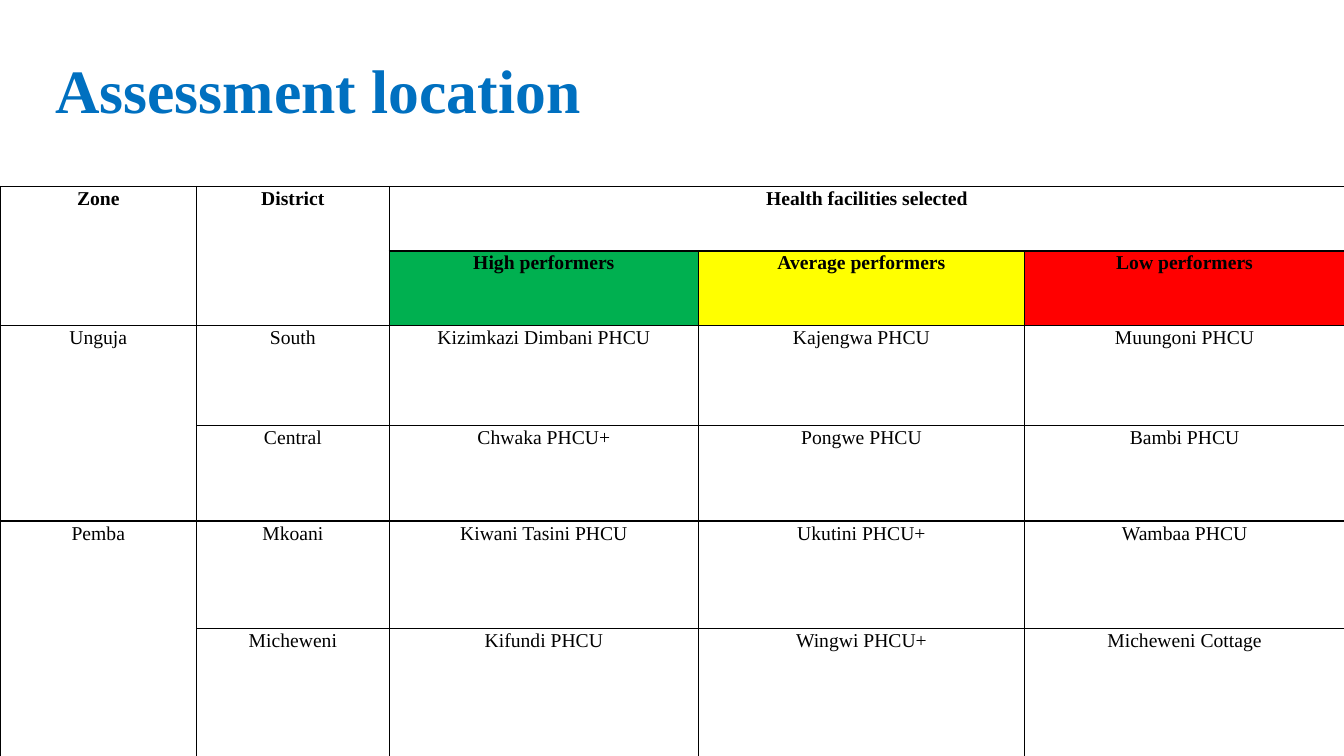
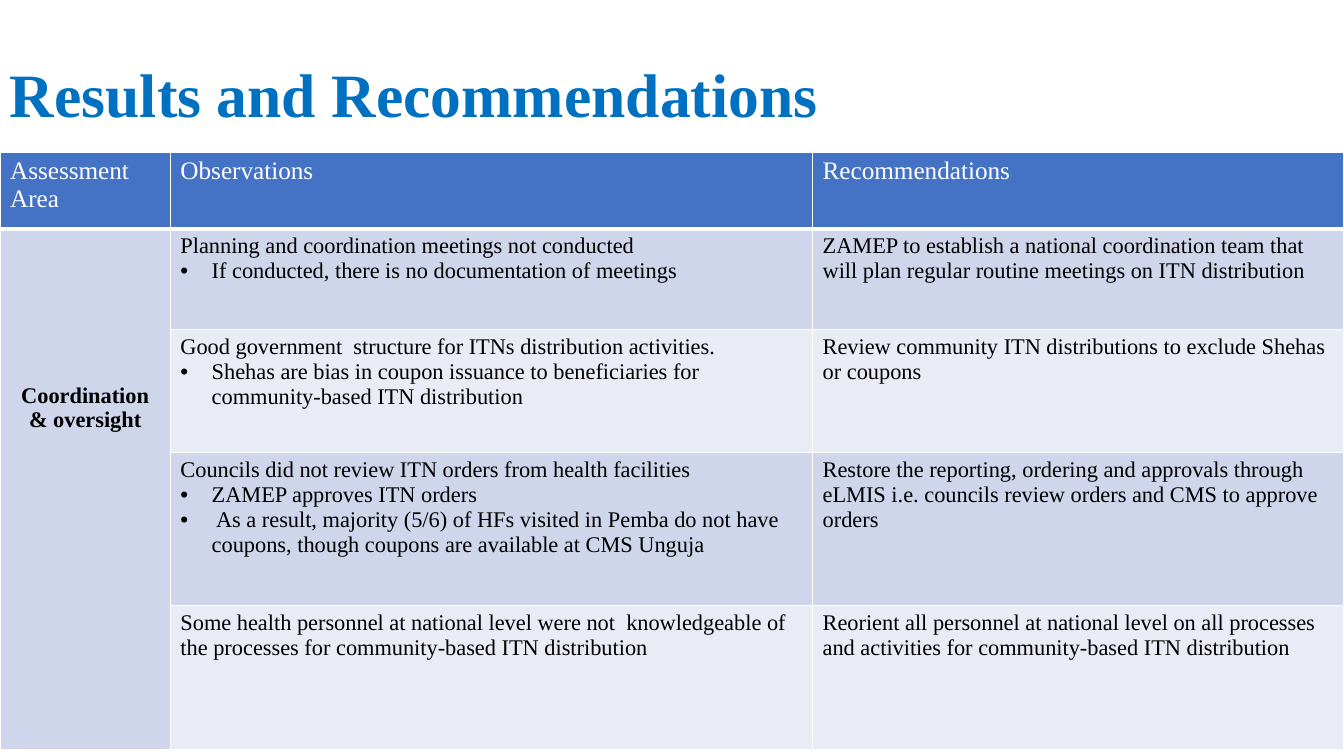
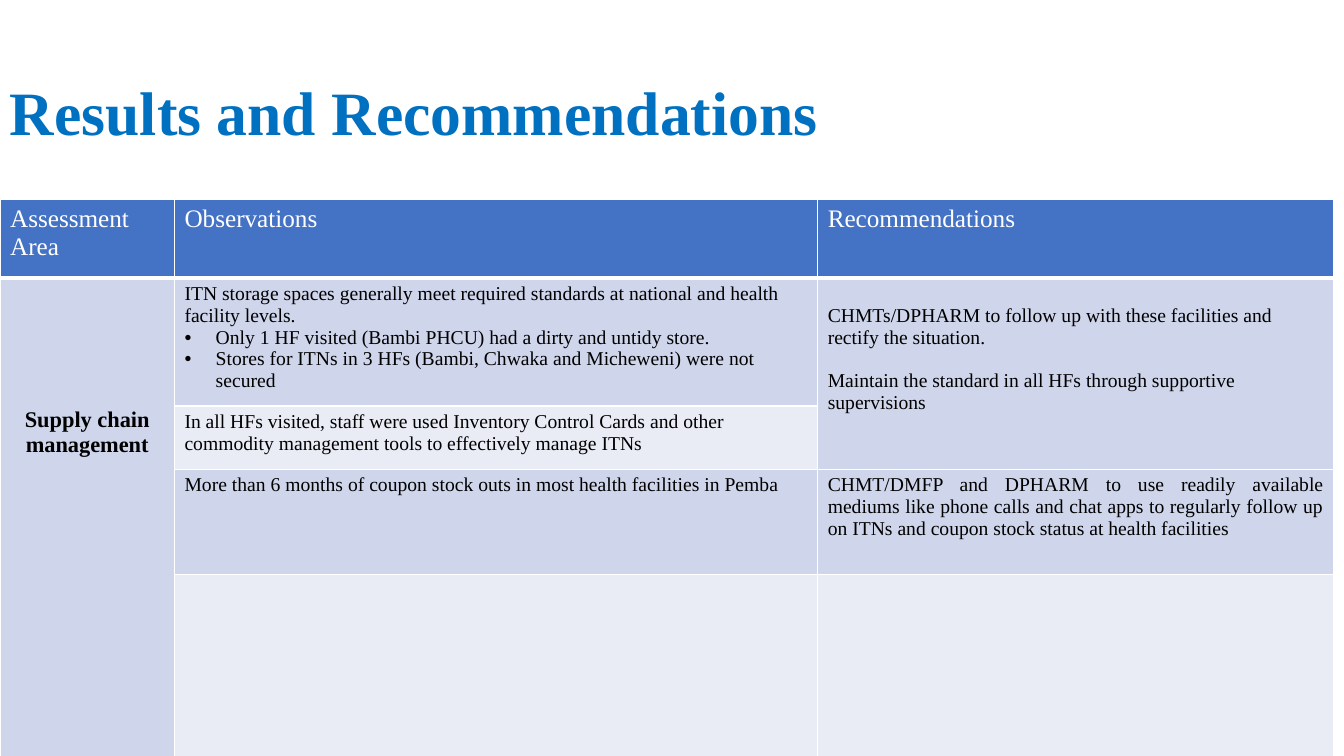
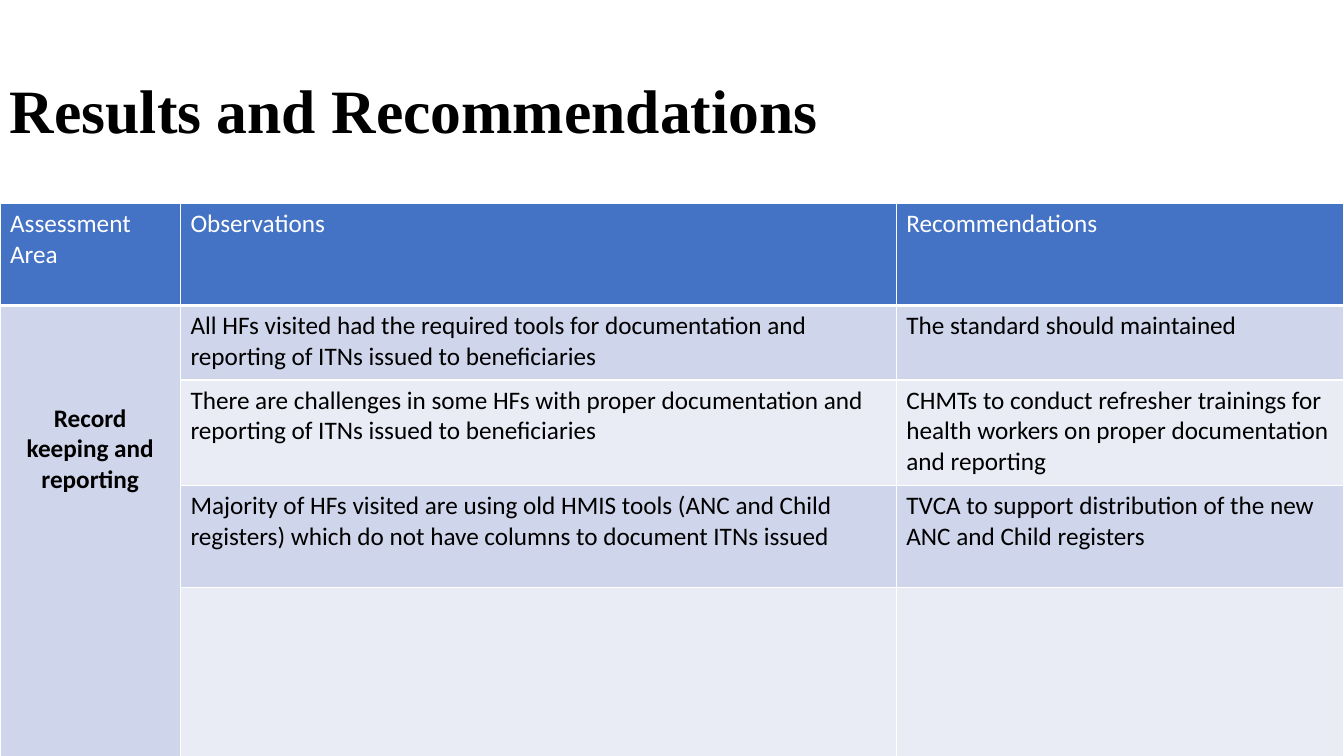
from dataclasses import dataclass, field

from lxml.etree import SubElement
from pptx import Presentation
from pptx.dml.color import RGBColor
from pptx.enum.text import MSO_ANCHOR, PP_ALIGN
from pptx.oxml.ns import qn
from pptx.util import Inches, Pt


@dataclass(frozen=True)
class Theme:
    width: float = 13.33
    height: float = 7.5
    serif: str = "Times New Roman"
    sans: str = "Calibri"
    black: str = "000000"
    white: str = "FFFFFF"
    title_blue: str = "0070C0"
    header_blue: str = "4472C4"
    bands: tuple = ("E9EBF5", "CFD5EA")
    high: str = "00B050"
    average: str = "FFFF00"
    low: str = "FF0000"
    title_size: int = 44
    header_size: int = 18
    area_size: int = 16
    body_size: int = 16
    small_size: int = 14
    cell_margins: tuple = (0.1, 0.05)
    bullet_indent: float = 0.31


THEME = Theme()


@dataclass
class Para:
    text: str
    bullet: bool = False
    format: dict = field(default_factory=dict)


@dataclass
class Entry:
    """Content of one table cell; top is the margin above its text."""
    paras: list
    top: float = THEME.cell_margins[1]


def bullet(text):
    return Para(text, bullet=True)


def apply_format(target, values):
    for attribute, value in values.items():
        setattr(target, attribute, value)


def font_style(size, name=THEME.serif, color=THEME.black, bold=False):
    return {"size": Pt(size), "name": name, "bold": bold, "color": color}


def write_paragraph(paragraph, para, style, shared_format):
    if para.bullet:
        properties = paragraph._p.get_or_add_pPr()
        indent = Inches(THEME.bullet_indent)
        properties.set("marL", str(indent))
        properties.set("indent", str(-indent))
        SubElement(properties, qn("a:buFont"), typeface="Arial")
        SubElement(properties, qn("a:buChar"), char="•")
    apply_format(paragraph, {**shared_format, **para.format})
    run = paragraph.add_run()
    run.text = para.text
    apply_format(run.font, {k: v for k, v in style.items() if k != "color"})
    run.font.color.rgb = RGBColor.from_string(style["color"])


def write_paragraphs(frame, paras, style, shared_format):
    for index, para in enumerate(paras):
        paragraph = frame.add_paragraph() if index else frame.paragraphs[0]
        write_paragraph(paragraph, para, style, shared_format)


def add_slide(deck):
    return deck.slides.add_slide(deck.slide_layouts[6])


def add_title(slide, text, left, top, width, height, color=THEME.title_blue):
    box = slide.shapes.add_textbox(*map(Inches, (left, top, width, height)))
    frame = box.text_frame
    apply_format(frame, {"word_wrap": True, "vertical_anchor": MSO_ANCHOR.MIDDLE})
    style = font_style(THEME.title_size, color=color, bold=True)
    write_paragraphs(frame, [Para(text)], style, {"line_spacing": 0.9})


def add_grid(slide, top, columns, rows, spans):
    """Add an unstyled table; each span is (first row, first column, last row, last column)."""
    size = Inches(sum(columns)), Inches(sum(rows))
    table = slide.shapes.add_table(
        len(rows), len(columns), 0, Inches(top), *size).table
    apply_format(table, {"first_row": False, "horz_banding": False})
    for column, width in zip(table.columns, columns):
        column.width = Inches(width)
    for row, height in zip(table.rows, rows):
        row.height = Inches(height)
    for first_row, first_column, last_row, last_column in spans:
        table.cell(first_row, first_column).merge(table.cell(last_row, last_column))
    return table


def set_borders(cell, color, bottom=1):
    properties = cell._tc.get_or_add_tcPr()
    for side, width in (("L", 1), ("R", 1), ("T", 1), ("B", bottom)):
        line = SubElement(properties, qn(f"a:ln{side}"), w=str(Pt(width)))
        SubElement(SubElement(line, qn("a:solidFill")), qn("a:srgbClr"), val=color)


def set_fill(cell, color):
    if color:
        cell.fill.solid()
        cell.fill.fore_color.rgb = RGBColor.from_string(color)
    else:
        cell.fill.background()


def set_margins(cell, side, top, bottom):
    apply_format(cell, {
        "margin_left": Inches(side), "margin_right": Inches(side),
        "margin_top": Inches(top), "margin_bottom": Inches(bottom)})


def add_location_table(slide, columns, rows, spans, content):
    table = add_grid(slide, 1.85, columns, rows, spans)
    fills = {(1, 2): THEME.high, (1, 3): THEME.average, (1, 4): THEME.low}
    shared = {"alignment": PP_ALIGN.CENTER, "line_spacing": 1.07}
    for r, texts in enumerate(content):
        style = font_style(THEME.small_size, bold=r < 2)
        for c, text in enumerate(texts):
            cell = table.cell(r, c)
            set_margins(cell, 0.07, 0, 0)
            set_borders(cell, THEME.black)
            set_fill(cell, fills.get((r, c)))
            if text:
                write_paragraphs(cell.text_frame, [Para(text)], style, shared)


def add_results_table(slide, top, columns, rows, area, findings,
                      body_size=THEME.body_size, area_size=THEME.area_size,
                      font=THEME.serif, spans=()):
    """Add a banded table: a header, one assessment area, and (observations, recommendations) rows."""
    table = add_grid(slide, top, columns, rows, [(1, 0, len(rows) - 1, 0), *spans])
    header = [Entry([Para(text)]) for text in
              ("Assessment Area", "Observations", "Recommendations")]
    areas = [area] + [None] * (len(findings) - 1)
    content = [header] + [(first, *pair) for first, pair in zip(areas, findings)]
    header_style = font_style(THEME.header_size, font, THEME.white)
    area_style = font_style(area_size, font, bold=True)
    body_style = font_style(body_size, font)
    side, edge = THEME.cell_margins
    for r, entries in enumerate(content):
        for c, entry in enumerate(entries):
            cell = table.cell(r, c)
            in_header, in_area = r == 0, r > 0 and c == 0
            set_borders(cell, THEME.white, bottom=3 if in_header else 1)
            set_fill(cell, THEME.header_blue if in_header else THEME.bands[r % 2])
            set_margins(cell, side, entry.top if entry else edge, edge)
            if entry:
                style = header_style if in_header else area_style if in_area else body_style
                align = PP_ALIGN.CENTER if in_area else PP_ALIGN.LEFT
                write_paragraphs(cell.text_frame, entry.paras, style, {"alignment": align})


def entry(*paras, top=THEME.cell_margins[1]):
    return Entry([Para(p) if isinstance(p, str) else p for p in paras], top)


def location_slide(deck):
    slide = add_slide(deck)
    add_title(slide, "Assessment location", 0.45, 0.4, 11.97, 1.05)
    add_location_table(
        slide,
        columns=[1.95, 1.91, 3.07, 3.23, 3.18],
        rows=[0.64, 0.74, 0.99, 0.95, 1.07, 1.27],
        spans=[(0, 0, 1, 0), (0, 1, 1, 1), (0, 2, 0, 4), (2, 0, 3, 0), (4, 0, 5, 0)],
        content=[
            ("Zone", "District", "Health facilities selected", None, None),
            (None, None, "High performers", "Average performers", "Low performers"),
            ("Unguja", "South", "Kizimkazi Dimbani PHCU", "Kajengwa PHCU", "Muungoni PHCU"),
            (None, "Central", "Chwaka PHCU+", "Pongwe PHCU", "Bambi PHCU"),
            ("Pemba", "Mkoani", "Kiwani Tasini PHCU", "Ukutini PHCU+", "Wambaa PHCU"),
            (None, "Micheweni", "Kifundi PHCU", "Wingwi PHCU+", "Micheweni Cottage"),
        ])


def results_slide(deck, title_box, title_color=THEME.title_blue, **table):
    slide = add_slide(deck)
    add_title(slide, "Results and Recommendations", *title_box, color=title_color)
    add_results_table(slide, **table)


def coordination_slide(deck):
    results_slide(
        deck, (0, 0.57, 11.28, 0.79), top=1.51,
        columns=[1.69, 6.37, 5.27], rows=[0.76, 1, 1.22, 1.52, 1.43],
        area=entry("Coordination & oversight", top=1.53),
        findings=[
            (entry("Planning and coordination meetings not conducted",
                   bullet("If conducted, there is no documentation of meetings")),
             entry("ZAMEP to establish a national coordination team that will plan "
                   "regular routine meetings on ITN distribution")),
            (entry("Good government  structure for ITNs distribution activities.",
                   bullet("Shehas are bias in coupon issuance to beneficiaries for "
                          "community-based ITN distribution")),
             entry("Review community ITN distributions to exclude Shehas or coupons")),
            (entry("Councils did not review ITN orders from health facilities",
                   bullet("ZAMEP approves ITN orders"),
                   bullet(" As a result, majority (5/6) of HFs visited in Pemba do not "
                          "have coupons, though coupons are available at CMS Unguja")),
             entry("Restore the reporting, ordering and approvals through eLMIS i.e. "
                   "councils review orders and CMS to approve orders")),
            (entry("Some health personnel at national level were not  knowledgeable of "
                   "the processes for community-based ITN distribution"),
             entry("Reorient all personnel at national level on all processes and "
                   "activities for community-based ITN distribution")),
        ])


def supply_chain_slide(deck):
    results_slide(
        deck, (0, 0.53, 11.28, 1.24), top=1.98,
        columns=[1.73, 6.38, 5.12], rows=[0.78, 1.15, 0.63, 1.04, 1.93],
        body_size=THEME.small_size, spans=[(1, 2, 2, 2)],
        area=entry("Supply chain management", top=1.28),
        findings=[
            (entry("ITN storage spaces generally meet required standards at national "
                   "and health facility levels.",
                   bullet("Only 1 HF visited (Bambi PHCU) had a dirty and untidy store."),
                   bullet("Stores for ITNs in 3 HFs (Bambi, Chwaka and Micheweni) were "
                          "not secured")),
             entry("CHMTs/DPHARM to follow up with these facilities and rectify the "
                   "situation.",
                   Para("Maintain the standard in all HFs through supportive supervisions",
                        format={"space_before": Pt(15.5)}),
                   top=0.27)),
            (entry("In all HFs visited, staff were used Inventory Control Cards and other "
                   "commodity management tools to effectively manage ITNs"),
             None),
            (entry("More than 6 months of coupon stock outs in most health facilities "
                   "in Pemba"),
             entry(Para("CHMT/DMFP and DPHARM to use readily available mediums like phone "
                        "calls and chat apps to regularly follow up on ITNs and coupon "
                        "stock status at health facilities",
                        format={"alignment": PP_ALIGN.JUSTIFY}))),
            (None, None),
        ])


def record_keeping_slide(deck):
    results_slide(
        deck, (0, 0.4, 13.33, 1.45), title_color=THEME.black, top=2.02,
        columns=[1.79, 7.1, 4.44], rows=[1.01, 0.74, 1.05, 1.01, 1.68],
        body_size=THEME.header_size, area_size=THEME.header_size, font=THEME.sans,
        area=entry("Record keeping and reporting", top=0.97),
        findings=[
            (entry("All HFs visited had the required tools for documentation and "
                   "reporting of ITNs issued to beneficiaries"),
             entry("The standard should maintained")),
            (entry("There are challenges in some HFs with proper documentation and "
                   "reporting of ITNs issued to beneficiaries"),
             entry("CHMTs to conduct refresher trainings for health workers on proper "
                   "documentation and reporting")),
            (entry("Majority of HFs visited are using old HMIS tools (ANC and Child "
                   "registers) which do not have columns to document ITNs issued"),
             entry("TVCA to support distribution of the new ANC and Child registers")),
            (None, None),
        ])


def main():
    deck = Presentation()
    apply_format(deck, {"slide_width": Inches(THEME.width),
                        "slide_height": Inches(THEME.height)})
    for build in (location_slide, coordination_slide,
                  supply_chain_slide, record_keeping_slide):
        build(deck)
    deck.save("out.pptx")


if __name__ == "__main__":
    main()
